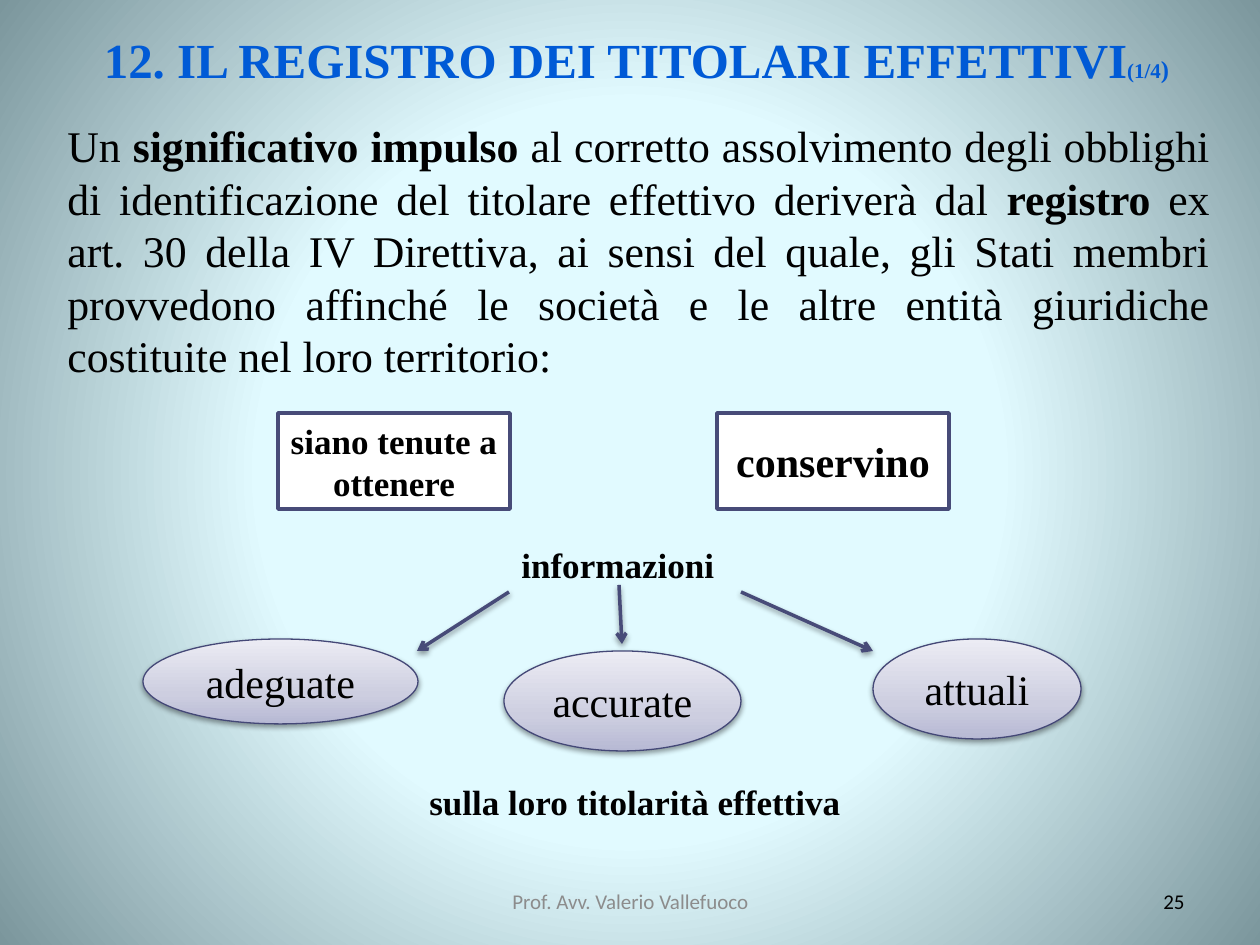
from dataclasses import dataclass

from pptx import Presentation
from pptx.dml.color import RGBColor
from pptx.enum.shapes import MSO_CONNECTOR, MSO_SHAPE
from pptx.enum.text import MSO_ANCHOR, MSO_AUTO_SIZE, PP_ALIGN
from pptx.oxml import parse_xml
from pptx.oxml.ns import nsdecls
from pptx.util import Emu, Pt

LEFT, CENTER, RIGHT, JUSTIFY = PP_ALIGN.LEFT, PP_ALIGN.CENTER, PP_ALIGN.RIGHT, PP_ALIGN.JUSTIFY
TOP, MIDDLE = MSO_ANCHOR.TOP, MSO_ANCHOR.MIDDLE
NO_FIT = MSO_AUTO_SIZE.NONE
RECTANGLE, OVAL = MSO_SHAPE.RECTANGLE, MSO_SHAPE.OVAL
STRAIGHT = MSO_CONNECTOR.STRAIGHT
TITLE_ONLY = 5
PX_PER_INCH = 126


@dataclass(frozen=True)
class Theme:
    serif: str = "Times New Roman"
    sans: str = "Calibri"
    title: str = "005AD6"
    text: str = "000000"
    muted: str = "8C8C8C"
    box: str = "FFFFFF"
    line: str = "474B78"
    oval_line: str = "444877"
    oval_stops: tuple = ((0, "B7B9D4"), (35, "CDCEE0"), (100, "ECECF4"))
    back_stops: tuple = ((47, "E1FAFF"), (100, "7B969C"))
    title_size: int = 28
    body_size: int = 25
    large: int = 24
    label: int = 20
    page_total: int = 14
    small: int = 12


THEME = Theme()


def px(length):
    return Emu(round(length * 914400 / PX_PER_INCH))


def gradient(stops, direction):
    """Gradient fill from (percent, colour) stops."""
    stop_list = "".join(
        f'<a:gs pos="{percent * 1000}"><a:srgbClr val="{colour}"/></a:gs>'
        for percent, colour in stops)
    return (f'<a:gradFill {nsdecls("a")} rotWithShape="1">'
            f'<a:gsLst>{stop_list}</a:gsLst>{direction}</a:gradFill>')


def set_background(slide):
    centre = ('<a:path path="circle">'
              '<a:fillToRect l="50000" t="50000" r="50000" b="50000"/></a:path>')
    slide.element.cSld.insert(0, parse_xml(
        f'<p:bg {nsdecls("p", "a")}><p:bgPr>{gradient(THEME.back_stops, centre)}'
        '<a:effectLst/></p:bgPr></p:bg>'))


def add_shadow(element):
    element.append(parse_xml(
        f'<a:effectLst {nsdecls("a")}>'
        '<a:outerShdw blurRad="40000" dist="20000" dir="5400000" rotWithShape="0">'
        '<a:srgbClr val="000000"><a:alpha val="38000"/></a:srgbClr>'
        '</a:outerShdw></a:effectLst>'))


def set_line(line, colour, width):
    line.color.rgb = RGBColor.from_string(colour)
    line.width = Pt(width)


def write(frame, runs, align=LEFT, anchor=TOP, wrap=True, font=THEME.serif, colour=THEME.text):
    """Fill a frame with one paragraph of (text, size, bold) runs."""
    frame.word_wrap = wrap
    frame.auto_size = NO_FIT
    frame.vertical_anchor = anchor
    paragraph = frame.paragraphs[0]
    paragraph.alignment = align
    for text, size, bold in runs:
        run = paragraph.add_run()
        run.text = text
        run.font.name = font
        run.font.size = Pt(size)
        run.font.bold = bold
        run.font.color.rgb = RGBColor.from_string(colour)


def set_title(slide, box, runs):
    title = slide.shapes.title
    title.left, title.top, title.width, title.height = map(px, box)
    frame = title.text_frame
    frame.margin_left = frame.margin_right = px(16)
    frame.margin_top = frame.margin_bottom = px(16)
    write(frame, runs, CENTER, colour=THEME.title)


def add_text(slide, box, runs, **style):
    write(slide.shapes.add_textbox(*map(px, box)).text_frame, runs, **style)


def add_duty(slide, left, text, size):
    duty = slide.shapes.add_shape(RECTANGLE, *map(px, (left, 413, 232, 96)))
    duty.shadow.inherit = False
    duty.fill.solid()
    duty.fill.fore_color.rgb = RGBColor.from_string(THEME.box)
    set_line(duty.line, THEME.line, 2)
    frame = duty.text_frame
    frame.margin_left = frame.margin_right = px(8)
    write(frame, [(text, size, True)], CENTER, MIDDLE)


def add_quality(slide, box, text):
    quality = slide.shapes.add_shape(OVAL, *map(px, box))
    properties = quality.element.spPr
    properties.append(parse_xml(gradient(THEME.oval_stops, '<a:lin ang="16200000" scaled="0"/>')))
    set_line(quality.line, THEME.oval_line, 0.75)
    add_shadow(properties)
    write(quality.text_frame, [(text, THEME.large, False)], CENTER, MIDDLE)


def add_arrow(slide, ends):
    arrow = slide.shapes.add_connector(STRAIGHT, *map(px, ends))
    set_line(arrow.line, THEME.line, 2)
    arrow.line._get_or_add_ln().append(parse_xml(f'<a:tailEnd {nsdecls("a")} type="arrow"/>'))
    add_shadow(arrow.element.spPr)


def main():
    deck = Presentation()
    deck.slide_width, deck.slide_height = px(1260), px(945)
    slide = deck.slides.add_slide(deck.slide_layouts[TITLE_ONLY])
    set_background(slide)

    # Title and introduction
    set_title(slide, (14, 13, 1245, 97), [
        ("12. IL REGISTRO DEI TITOLARI EFFETTIVI", THEME.title_size, True),
        ("(1/4", THEME.small, True),
        (")", THEME.page_total, True)])
    introduction = [
        ("Un ", False),
        ("significativo impulso ", True),
        ("al corretto assolvimento degli obblighi di identificazione del titolare "
         "effettivo deriverà dal ", False),
        ("registro", True),
        (" ex art. 30 della IV Direttiva, ai sensi del quale, gli Stati membri provvedono "
         "affinché le società e le altre entità giuridiche costituite nel loro territorio:", False)]
    add_text(slide, (55, 113, 1167, 277),
             [(text, THEME.body_size, bold) for text, bold in introduction], align=JUSTIFY)

    # Duties of the companies
    add_duty(slide, 278, "siano tenute a ottenere", THEME.label)
    add_duty(slide, 717, "conservino", THEME.large)

    # Information and its qualities
    for box, text in (((509, 537, 219, 55), "informazioni"),
                      ((417, 774, 438, 55), "sulla loro titolarità effettiva")):
        add_text(slide, box, [(text, THEME.label, True)], wrap=False)
    for box, text in (((143, 639, 275, 85), "adeguate"),
                      ((504, 651, 237, 100), "accurate"),
                      ((873, 639, 208, 100), "attuali")):
        add_quality(slide, box, text)
    for ends in ((509, 592, 417, 651), (619, 585, 622, 644), (741, 592, 873, 651)):
        add_arrow(slide, ends)

    # Footer
    add_text(slide, (431, 876, 399, 50), [("Prof. Avv. Valerio Vallefuoco", THEME.small, False)],
             align=CENTER, anchor=MIDDLE, font=THEME.sans, colour=THEME.muted)
    add_text(slide, (903, 876, 294, 50), [("25", THEME.small, False)],
             align=RIGHT, anchor=MIDDLE, font=THEME.sans)

    deck.save("out.pptx")


if __name__ == "__main__":
    main()
